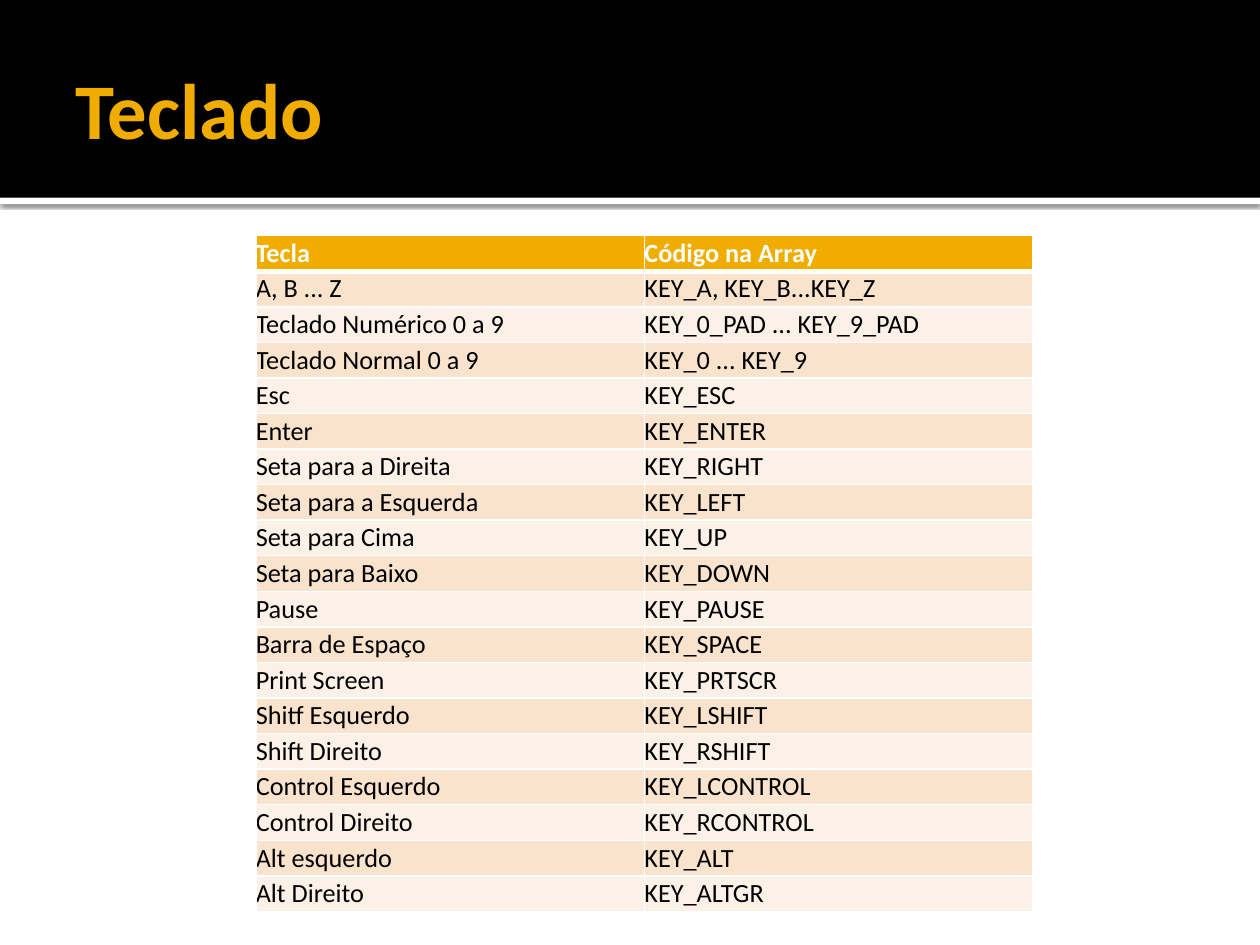
from dataclasses import dataclass
from typing import NamedTuple

from lxml import etree
from pptx import Presentation
from pptx.dml.color import RGBColor
from pptx.enum.shapes import MSO_SHAPE
from pptx.enum.text import MSO_ANCHOR, MSO_AUTO_SIZE, PP_ALIGN
from pptx.oxml import parse_xml
from pptx.oxml.ns import nsdecls, qn
from pptx.util import Inches, Pt

RECTANGLE = MSO_SHAPE.RECTANGLE
MIDDLE = MSO_ANCHOR.MIDDLE
LEFT, JUSTIFY = PP_ALIGN.LEFT, PP_ALIGN.JUSTIFY
NO_AUTOFIT = MSO_AUTO_SIZE.NONE
TITLE_ONLY = 5


@dataclass(frozen=True)
class Theme:
    font: str = "Calibri"
    title_size: float = 45
    table_size: float = 15
    accent: str = "F0AD00"
    white: str = "FFFFFF"
    black: str = "000000"
    bands: tuple[str, str] = ("F9E3CC", "FCF1E7")
    thin_line: float = 1
    header_line: float = 3


class Bar(NamedTuple):
    top: float
    height: float
    color: str


class KeyRow(NamedTuple):
    key: str
    code: str


THEME = Theme()
SLIDE_WIDTH, SLIDE_HEIGHT = 10, 7.5
STRIP = Bar(1.57, 0.05, THEME.white)
BANNER = Bar(0, 1.57, THEME.black)

ROWS = [
    KeyRow("Tecla", "Código na Array"),
    KeyRow("A, B ... Z", "KEY_A, KEY_B...KEY_Z"),
    KeyRow("Teclado Numérico 0 a 9", "KEY_0_PAD ... KEY_9_PAD"),
    KeyRow("Teclado Normal 0 a 9", "KEY_0 ... KEY_9"),
    KeyRow("Esc", "KEY_ESC"),
    KeyRow("Enter", "KEY_ENTER"),
    KeyRow("Seta para a Direita", "KEY_RIGHT"),
    KeyRow("Seta para a Esquerda", "KEY_LEFT"),
    KeyRow("Seta para Cima", "KEY_UP"),
    KeyRow("Seta para Baixo", "KEY_DOWN"),
    KeyRow("Pause", "KEY_PAUSE"),
    KeyRow("Barra de Espaço", "KEY_SPACE"),
    KeyRow("Print Screen", "KEY_PRTSCR"),
    KeyRow("Shitf Esquerdo", "KEY_LSHIFT"),
    KeyRow("Shift Direito", "KEY_RSHIFT"),
    KeyRow("Control Esquerdo", "KEY_LCONTROL"),
    KeyRow("Control Direito", "KEY_RCONTROL"),
    KeyRow("Alt esquerdo", "KEY_ALT"),
    KeyRow("Alt Direito", "KEY_ALTGR"),
]


def add_span(para, text: str, size: float, color: str, bold: bool) -> None:
    span = para.add_run()
    span.text = text
    span.font.name = THEME.font
    span.font.size = Pt(size)
    span.font.bold = bold
    span.font.color.rgb = RGBColor.from_string(color)


def add_bar(page, bar: Bar):
    box = page.shapes.add_shape(
        RECTANGLE, 0, Inches(bar.top), Inches(SLIDE_WIDTH), Inches(bar.height)
    )
    box.shadow.inherit = False
    box.fill.solid()
    box.fill.fore_color.rgb = RGBColor.from_string(bar.color)
    box.line.fill.background()
    return box


def add_shadow(box) -> None:
    effects = box.element.spPr.find(qn("a:effectLst"))
    effects.append(parse_xml(
        f'<a:outerShdw {nsdecls("a")} blurRad="{Pt(2.5)}" dist="{Pt(0.8)}" '
        f'dir="5400000" algn="tl" rotWithShape="0">'
        f'<a:srgbClr val="{THEME.black}"><a:alpha val="60000"/></a:srgbClr>'
        f'</a:outerShdw>'
    ))


def set_title(page, text: str):
    title = page.shapes.title
    title.left, title.top = Inches(0.5), Inches(0.17)
    title.width, title.height = Inches(9), Inches(1.37)
    frame = title.text_frame
    frame.word_wrap = True
    frame.auto_size = NO_AUTOFIT
    frame.vertical_anchor = MIDDLE
    frame.margin_left = Inches(0.1)
    frame.margin_top = frame.margin_right = frame.margin_bottom = Inches(0.05)
    para = frame.paragraphs[0]
    para.alignment = LEFT
    add_span(para, text, THEME.title_size, THEME.accent, True)
    return title


def set_borders(cell, widths: dict[str, float]) -> None:
    properties = cell._tc.get_or_add_tcPr()
    for position, side in enumerate("LRTB"):
        line = etree.Element(qn(f"a:ln{side}"), w=str(Pt(widths.get(side, THEME.thin_line))))
        fill = etree.SubElement(line, qn("a:solidFill"))
        etree.SubElement(fill, qn("a:srgbClr"), val=THEME.white)
        properties.insert(position, line)


def fill_cell(cell, text: str, row: int) -> None:
    header = row == 0
    cell.margin_left = cell.margin_right = cell.margin_top = cell.margin_bottom = 0
    cell.vertical_anchor = MIDDLE
    cell.fill.solid()
    fill = THEME.accent if header else THEME.bands[(row - 1) % 2]
    cell.fill.fore_color.rgb = RGBColor.from_string(fill)
    # The header and the first body row share the thick edge
    thick_side = {0: "B", 1: "T"}.get(row)
    set_borders(cell, {thick_side: THEME.header_line} if thick_side else {})
    para = cell.text_frame.paragraphs[0]
    para.alignment = JUSTIFY
    color = THEME.white if header else THEME.black
    add_span(para, text, THEME.table_size, color, header)


def add_key_table(page, rows: list[KeyRow]) -> None:
    table = page.shapes.add_table(
        len(rows), 2, Inches(2.03), Inches(1.87), Inches(6.17), Inches(5.37)
    ).table
    for row, entry in enumerate(rows):
        for column, text in enumerate(entry):
            fill_cell(table.cell(row, column), text, row)


def main() -> None:
    deck = Presentation()
    deck.slide_width, deck.slide_height = Inches(SLIDE_WIDTH), Inches(SLIDE_HEIGHT)
    page = deck.slides.add_slide(deck.slide_layouts[TITLE_ONLY])

    # Banner with a shadowed strip beneath it
    add_shadow(add_bar(page, STRIP))
    banner = add_bar(page, BANNER)

    # Title, placed in front of the banner
    title = set_title(page, "Teclado")
    banner.element.addnext(title.element)

    # Keys and their codes
    add_key_table(page, ROWS)
    deck.save("out.pptx")


if __name__ == "__main__":
    main()
